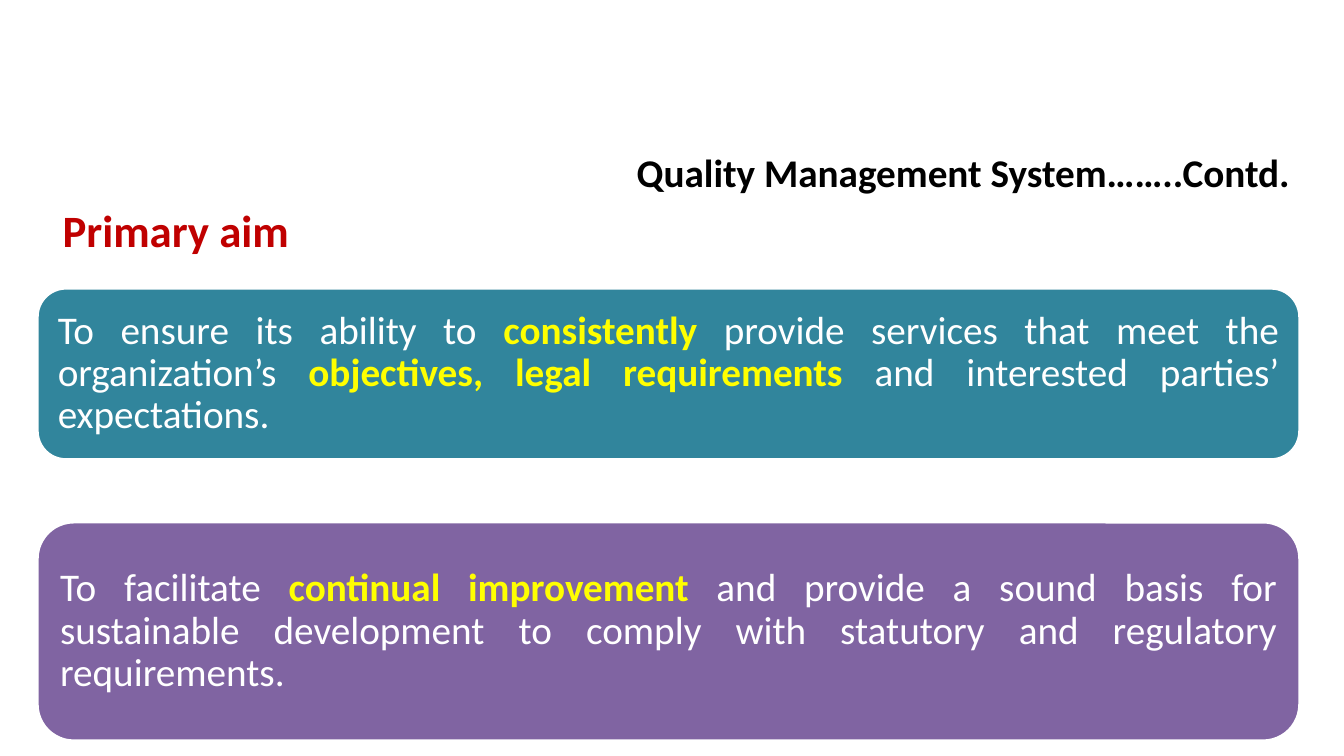
from dataclasses import dataclass

from lxml.etree import SubElement
from pptx import Presentation
from pptx.dml.color import RGBColor
from pptx.enum.shapes import MSO_SHAPE as Shape
from pptx.enum.text import MSO_ANCHOR as Anchor, MSO_AUTO_SIZE as AutoSize, PP_ALIGN as Align
from pptx.oxml.ns import qn
from pptx.util import Inches, Pt

FONT = "Calibri"
COLORS = {
    "heading": "000000",
    "aim": "C00000",
    "teal": "31859C",
    "purple": "8064A2",
    "plain": "FFFFFF",
    "emphasis": "FFFF00",
}
CARD_LEFT, CARD_WIDTH = 0.37, 12.52
CARD_INSET = Inches(0.12)


@dataclass(frozen=True)
class Card:
    top: float
    height: float
    fill: str
    phrases: tuple[str, ...]  # plain and emphasised phrases alternate


CARDS = (
    Card(2.86, 1.7, "teal", (
        "To ensure its ability to ",
        "consistently",
        " provide services that meet the organization’s ",
        "objectives, legal requirements ",
        "and interested parties’ expectations.",
    )),
    Card(5.18, 2.17, "purple", (
        "To facilitate ",
        "continual improvement ",
        "and provide a sound basis for sustainable development to comply "
        "with statutory and regulatory requirements.",
    )),
)


def color(name: str) -> RGBColor:
    return RGBColor.from_string(COLORS[name])


def style_run(run, size: int, color_name: str, bold: bool) -> None:
    run.font.name = FONT
    run.font.size = Pt(size)
    run.font.bold = bold
    run.font.color.rgb = color(color_name)


def fill_placeholder(placeholder, text: str, box: tuple[float, ...], size: int,
                     color_name: str, align: Align, anchor: Anchor) -> None:
    placeholder.left, placeholder.top, placeholder.width, placeholder.height = map(Inches, box)
    frame = placeholder.text_frame
    frame.text = text
    frame.auto_size = AutoSize.NONE
    frame.vertical_anchor = anchor
    paragraph = frame.paragraphs[0]
    paragraph.alignment = align
    style_run(paragraph.runs[0], size, color_name, True)


def remove_bullet(paragraph) -> None:
    properties = paragraph._p.get_or_add_pPr()
    properties.set("marL", "0")
    properties.set("indent", "0")
    SubElement(properties, qn("a:buNone"))


def add_card(slide, card: Card) -> None:
    panel = slide.shapes.add_shape(
        Shape.ROUNDED_RECTANGLE, Inches(CARD_LEFT), Inches(card.top),
        Inches(CARD_WIDTH), Inches(card.height))
    panel.shadow.inherit = False
    panel.fill.solid()
    panel.fill.fore_color.rgb = color(card.fill)
    panel.line.color.rgb = color("plain")
    panel.line.width = Pt(2)

    frame = panel.text_frame
    frame.word_wrap = True
    frame.vertical_anchor = Anchor.MIDDLE
    frame.margin_left = frame.margin_right = CARD_INSET
    frame.margin_top = frame.margin_bottom = CARD_INSET
    paragraph = frame.paragraphs[0]
    paragraph.alignment = Align.JUSTIFY
    paragraph.line_spacing = 0.9
    for index, phrase in enumerate(card.phrases):
        emphasised = index % 2 == 1
        run = paragraph.add_run()
        run.text = phrase
        style_run(run, 28, "emphasis" if emphasised else "plain", emphasised)


def main() -> None:
    deck = Presentation()
    deck.slide_width, deck.slide_height = Inches(13.33), Inches(7.5)
    slide = deck.slides.add_slide(deck.slide_layouts[1])

    fill_placeholder(slide.shapes.title, "Quality Management System……..Contd.",
                     (2.97, 1.08, 9.92, 1.25), 28, "heading", Align.RIGHT, Anchor.MIDDLE)
    aim = slide.placeholders[1]
    fill_placeholder(aim, "Primary aim",
                     (0.52, 1.96, 9.92, 0.87), 32, "aim", Align.JUSTIFY, Anchor.TOP)
    remove_bullet(aim.text_frame.paragraphs[0])

    for card in CARDS:
        add_card(slide, card)
    deck.save("out.pptx")


if __name__ == "__main__":
    main()
